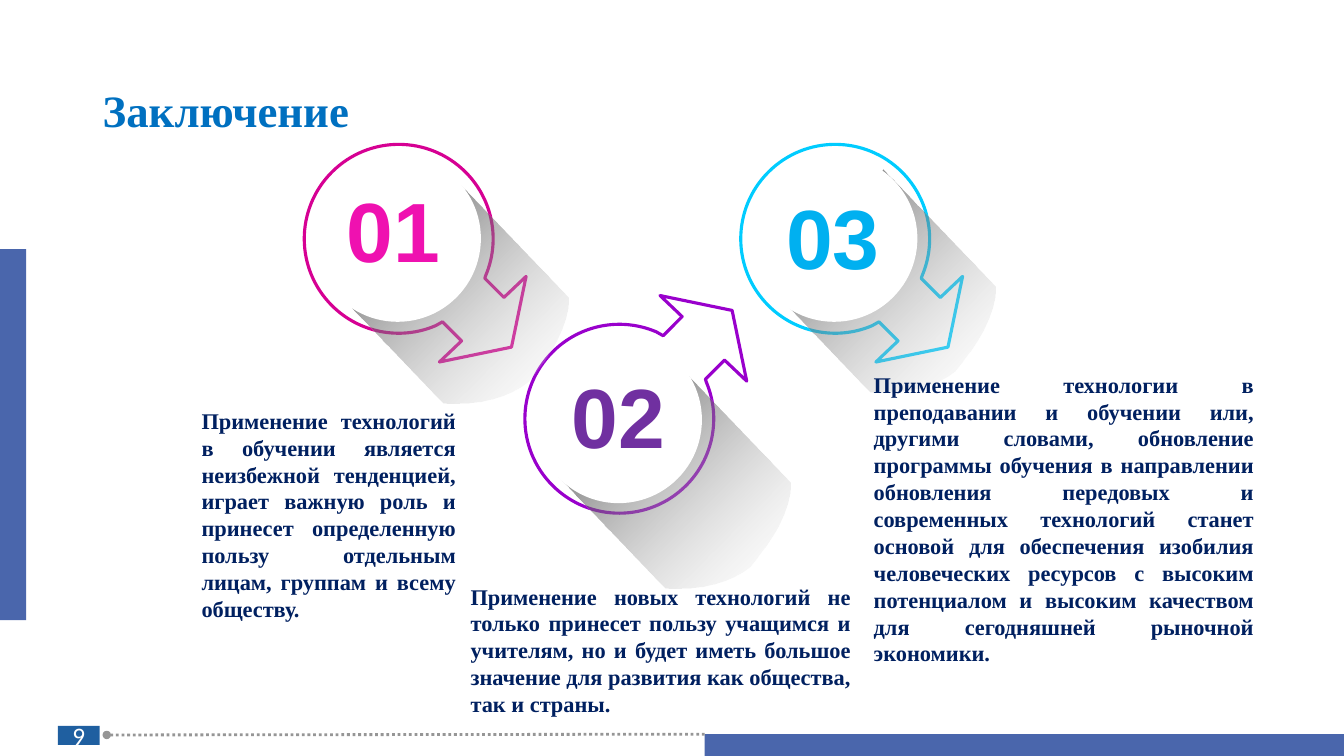
from dataclasses import dataclass
from math import cos, radians, sin, tan

from lxml.etree import SubElement
from pptx import Presentation
from pptx.dml.color import RGBColor
from pptx.enum.dml import MSO_LINE
from pptx.enum.shapes import MSO_CONNECTOR, MSO_SHAPE
from pptx.enum.text import MSO_ANCHOR, MSO_AUTO_SIZE, PP_ALIGN
from pptx.oxml.ns import qn
from pptx.util import Cm, Pt

WHITE = RGBColor(0xFF, 0xFF, 0xFF)
BLACK = RGBColor(0x0D, 0x0D, 0x0D)
GRAY = RGBColor(0x96, 0x96, 0x96)
BAR_BLUE = RGBColor(0x4A, 0x66, 0xAC)
BADGE_BLUE = RGBColor(0x1F, 0x5F, 0xA0)
TITLE_BLUE = RGBColor(0x00, 0x70, 0xC0)
NAVY = RGBColor(0x00, 0x20, 0x60)
CYAN = RGBColor(0x00, 0xCC, 0xFF)
SKY = RGBColor(0x00, 0xB0, 0xF0)
VIOLET = RGBColor(0x99, 0x00, 0xCC)
PURPLE = RGBColor(0x70, 0x30, 0xA0)
MAGENTA = RGBColor(0xD6, 0x00, 0x93)
PINK = RGBColor(0xEF, 0x11, 0xB0)

SERIF = "Times New Roman"
RADIUS = 2.38
DISC = 4.2

Point = tuple[float, float]
Segment = tuple[Point, ...]
Box = tuple[float, float, float, float]


@dataclass
class Style:
    font: str
    size: int
    color: RGBColor
    bold: bool = True
    align: PP_ALIGN = PP_ALIGN.LEFT


@dataclass
class Step:
    number: str
    note: str
    line_color: RGBColor
    number_color: RGBColor
    upward: bool
    arrow_at: Point
    shadow_at: Point
    disc_at: Point
    number_at: Point
    note_box: Box


STEPS = [
    Step("03",
         "Применение технологии в преподавании и обучении или, другими словами, "
         "обновление программы обучения в направлении обновления передовых и "
         "современных технологий станет основой для обеспечения изобилия "
         "человеческих ресурсов с высоким потенциалом и высоким качеством для "
         "сегодняшней рыночной экономики.",
         CYAN, SKY, False, (18.44, 4.19), (19.23, 4.27), (18.92, 3.91),
         (19.56, 4.55), (21.77, 9.22, 10.08, 7.77)),
    Step("02",
         "Применение новых технологий не только принесет пользу учащимся и "
         "учителям, но и будет иметь большое значение для развития как "
         "общества, так и страны.",
         VIOLET, PURPLE, True, (13.0, 7.62), (14.07, 9.2), (13.49, 8.48),
         (14.15, 9.07), (11.61, 14.56, 10.08, 3.68)),
    Step("01",
         "Применение технологий в обучении является неизбежной тенденцией, "
         "играет важную роль и принесет определенную пользу отдельным лицам, "
         "группам и всему обществу.",
         MAGENTA, PINK, False, (7.44, 4.19), (8.48, 4.55), (7.92, 3.91),
         (8.48, 4.37), (4.83, 10.13, 6.91, 5.74)),
]


def on_ring(angle: float, reach: float = 0) -> Point:
    c, s = cos(radians(angle)), sin(radians(angle))
    return RADIUS * (1 + c - reach * s), RADIUS * (1 - s - reach * c)


def ring_arc(start: float, end: float) -> Segment:
    reach = 4 / 3 * tan(radians(end - start) / 4)
    return on_ring(start, reach), on_ring(end, -reach), on_ring(end)


def arrow_outline(upward: bool) -> list[Segment]:
    angles = (22, 90, 180, 270, 338)
    corners = [(6.32, 2.3), (5.32, 0.78), (5.3, 1.55), (4.62, 1.55), on_ring(22)]
    outline = [*((p,) for p in corners),
               *(ring_arc(a, b) for a, b in zip(angles, angles[1:])),
               ((4.64, 3.08),), ((5.32, 3.08),), ((5.3, 3.85),)]
    if upward:
        return [tuple((x, 2 * RADIUS - y) for x, y in seg) for seg in outline]
    return outline


def shadow_outline() -> list[Segment]:
    return [((0, 2.8),), ((2.69, 5.61),),
            ((3.6, 5.69), (4.39, 5.44), (4.82, 5.08)),
            ((5.38, 4.42), (5.87, 3.61), (5.85, 2.95)),
            ((3.02, 0),)]


def add_outline(shapes, outline: list[Segment], at: Point):
    points = [(Cm(at[0] + x), Cm(at[1] + y)) for seg in outline for x, y in seg]
    builder = shapes.build_freeform(*points[0])
    builder.add_line_segments(points[1:], close=True)
    sp = builder.convert_to_shape()
    sp.shadow.inherit = False
    nodes = iter(list(sp.element.spPr.iter(qn("a:lnTo"))))
    for seg in outline[1:]:
        node = next(nodes)
        if len(seg) == 3:
            node.tag = qn("a:cubicBezTo")
            for extra in (next(nodes), next(nodes)):
                node.append(extra[0])
                node.getparent().remove(extra)
    return sp


def add_solid(shapes, kind: MSO_SHAPE, box: Box, color: RGBColor):
    sp = shapes.add_shape(kind, *map(Cm, box))
    sp.shadow.inherit = False
    sp.fill.solid()
    sp.fill.fore_color.rgb = color
    sp.line.fill.background()
    return sp


def write(sp, text: str, style: Style):
    tf = sp.text_frame
    tf.word_wrap = True
    tf.text = text
    p = tf.paragraphs[0]
    p.alignment = style.align
    font = p.runs[0].font
    font.name, font.size, font.bold = style.font, Pt(style.size), style.bold
    font.color.rgb = style.color
    return tf


def add_text(shapes, box: Box, text: str, style: Style):
    tf = write(shapes.add_textbox(*map(Cm, box)), text, style)
    tf.auto_size = MSO_AUTO_SIZE.SHAPE_TO_FIT_TEXT
    return tf


def add_long_shadow(shapes, at: Point) -> None:
    sp = add_outline(shapes, shadow_outline(), at)
    sp.line.fill.background()
    sp.fill.gradient()
    sp.fill.gradient_angle = 135
    for stop, color, position in zip(sp.fill.gradient_stops, (WHITE, BLACK), (0, 1)):
        stop.color.rgb = color
        stop.position = position
    for clr, alpha in zip(sp.element.spPr.iter(qn("a:srgbClr")), (15000, 81000)):
        SubElement(clr, qn("a:alpha")).set("val", str(alpha))


def add_step_figure(shapes, step: Step) -> None:
    arrow = add_outline(shapes, arrow_outline(step.upward), step.arrow_at)
    arrow.rotation = 315 if step.upward else 45
    arrow.fill.background()
    arrow.line.color.rgb = step.line_color
    arrow.line.width = Pt(2.25)
    add_long_shadow(shapes, step.shadow_at)
    add_solid(shapes, MSO_SHAPE.OVAL, (*step.disc_at, DISC, DISC), WHITE)


def add_step_text(shapes, step: Step) -> None:
    add_text(shapes, (*step.number_at, 18.59, 2.82), step.number,
             Style("Arial", 60, step.number_color))
    add_text(shapes, step.note_box, step.note,
             Style(SERIF, 16, NAVY, align=PP_ALIGN.JUSTIFY))


def add_footer(shapes) -> None:
    add_solid(shapes, MSO_SHAPE.RECTANGLE, (0, 6.28, 0.66, 9.35), BAR_BLUE)
    add_solid(shapes, MSO_SHAPE.RECTANGLE, (17.76, 18.5, 16.11, 0.55), BAR_BLUE)
    badge = add_solid(shapes, MSO_SHAPE.RECTANGLE, (1.46, 18.29, 1.05, 0.48), BADGE_BLUE)
    tf = write(badge, "9", Style("Calibri", 18, WHITE, False, PP_ALIGN.CENTER))
    tf.vertical_anchor = MSO_ANCHOR.MIDDLE
    tf.margin_left = tf.margin_right = tf.margin_top = tf.margin_bottom = Cm(0.25)
    rule = shapes.add_connector(MSO_CONNECTOR.STRAIGHT,
                                Cm(17.76), Cm(18.5), Cm(2.69), Cm(18.52))
    rule.line.color.rgb = GRAY
    rule.line.width = Pt(2)
    rule.line.dash_style = MSO_LINE.ROUND_DOT
    SubElement(rule.line._get_or_add_ln(), qn("a:tailEnd")).set("type", "oval")
    SubElement(rule.element.spPr, qn("a:effectLst"))


def main() -> None:
    prs = Presentation()
    prs.slide_width, prs.slide_height = Cm(33.87), Cm(19.05)
    shapes = prs.slides.add_slide(prs.slide_layouts[6]).shapes
    title = add_text(shapes, (2.34, 1.02, 29.21, 3.68), "Заключение",
                     Style(SERIF, 32, TITLE_BLUE))
    title.auto_size = MSO_AUTO_SIZE.NONE
    title.vertical_anchor = MSO_ANCHOR.MIDDLE
    title.paragraphs[0].line_spacing = 0.9
    add_footer(shapes)
    for add_part in (add_step_figure, add_step_text):
        for step in STEPS:
            add_part(shapes, step)
    prs.save("out.pptx")


if __name__ == "__main__":
    main()
